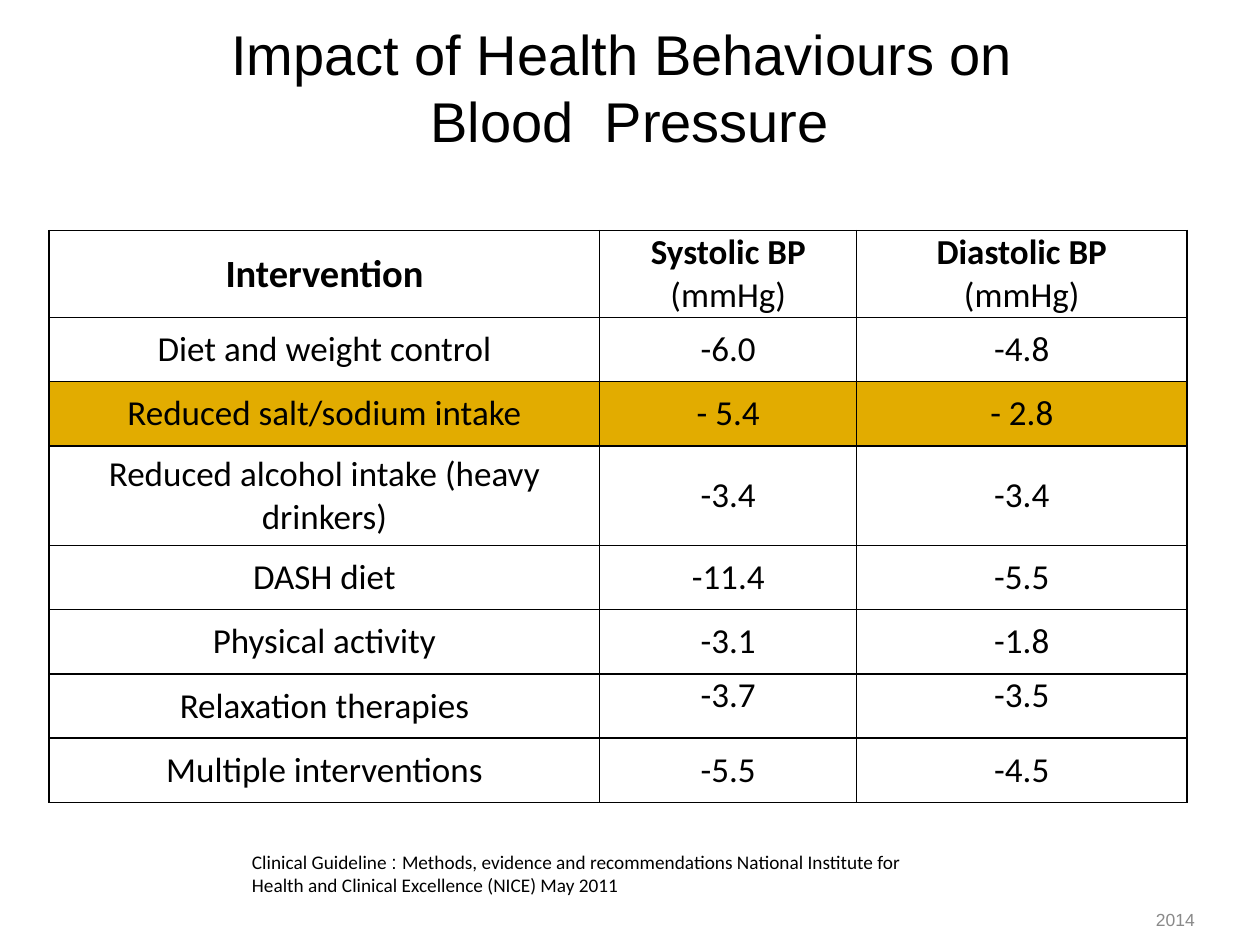
import pptx
import pptx.dml.color
import pptx.enum.text
import pptx.oxml
import pptx.oxml.ns
import pptx.util
from pptx.util import Inches

ALIGN = pptx.enum.text.PP_ALIGN
ANCHOR = pptx.enum.text.MSO_ANCHOR
BLACK, WHITE, GOLD, GREY = "000000", "FFFFFF", "E2AC00", "898989"

COLUMN_WIDTHS = [4.37, 2.04, 2.62]
HEADERS = [
    [("Intervention", 22, True)],
    [("Systolic BP", 20, True), ("(mmHg)", 20, False)],
    [("Diastolic BP", 20, True), ("(mmHg)", 20, False)],
]
HEADER_HEIGHT, ROW_HEIGHT, TALL_ROW_HEIGHT = 0.69, 0.51, 0.79
INTERVENTIONS = [
    ("Diet and weight control", "-6.0", "-4.8"),
    ("Reduced salt/sodium intake", "- 5.4", "- 2.8"),
    ("Reduced alcohol intake (heavy drinkers)", "-3.4", "-3.4"),
    ("DASH diet", "-11.4", "-5.5"),
    ("Physical activity", "-3.1", "-1.8"),
    ("Relaxation therapies", "-3.7", "-3.5"),
    ("Multiple interventions", "-5.5", "-4.5"),
]
HIGHLIGHTED_ROW, TALL_ROW, TOP_VALUES_ROW = 2, 3, 6


def rgb(color):
    return pptx.dml.color.RGBColor.from_string(color)


def add_run(p, text, size, font="Calibri", color=BLACK, bold=False):
    r = p.add_run()
    r.text = text
    r.font.size = pptx.util.Pt(size)
    r.font.name = font
    r.font.bold = bold
    r.font.color.rgb = rgb(color)


def add_text_box(s, box, inset, anchor, align):
    sp = s.shapes.add_textbox(*map(Inches, box))
    tf = sp.text_frame
    tf.word_wrap = True
    tf.vertical_anchor = anchor
    tf.margin_left = tf.margin_right = Inches(inset)
    tf.margin_top = tf.margin_bottom = Inches(inset)
    p = tf.paragraphs[0]
    p.alignment = align
    return p


def add_title(s, box):
    p = add_text_box(s, box, 0.04, ANCHOR.MIDDLE, ALIGN.CENTER)
    add_run(p, "Impact of Health Behaviours on ", 32, "Arial")
    p.add_line_break()
    add_run(p, "Blood  Pressure", 32, "Arial")


def add_borders(cell):
    tc_pr = cell._tc.get_or_add_tcPr()
    for index, side in enumerate(("lnL", "lnR", "lnT", "lnB")):
        tc_pr.insert(index, pptx.oxml.parse_xml(
            f'<a:{side} {pptx.oxml.ns.nsdecls("a")} w="12700"><a:solidFill>'
            f'<a:srgbClr val="{BLACK}"/></a:solidFill></a:{side}>'))


def fill_cell(cell, lines, fill, anchor):
    cell.margin_left = cell.margin_right = 0
    cell.margin_top = cell.margin_bottom = 0
    cell.vertical_anchor = anchor
    cell.fill.solid()
    cell.fill.fore_color.rgb = rgb(fill)
    add_borders(cell)
    tf = cell.text_frame
    for index, (text, size, bold) in enumerate(lines):
        p = tf.add_paragraph() if index else tf.paragraphs[0]
        p.alignment = ALIGN.CENTER
        add_run(p, text, size, bold=bold)


def add_intervention_table(s, box):
    rows = [HEADERS] + [[[(text, 20, False)] for text in row] for row in INTERVENTIONS]
    table = s.shapes.add_table(len(rows), len(COLUMN_WIDTHS), *map(Inches, box)).table
    for column, width in zip(table.columns, COLUMN_WIDTHS):
        column.width = Inches(width)
    heights = {0: HEADER_HEIGHT, TALL_ROW: TALL_ROW_HEIGHT}
    for i, row in enumerate(rows):
        table.rows[i].height = Inches(heights.get(i, ROW_HEIGHT))
        fill = GOLD if i == HIGHLIGHTED_ROW else WHITE
        for j, lines in enumerate(row):
            at_top = i == TOP_VALUES_ROW and j > 0
            fill_cell(table.cell(i, j), lines, fill, ANCHOR.TOP if at_top else ANCHOR.MIDDLE)


def add_source(s, box):
    p = add_text_box(s, box, 0, ANCHOR.TOP, ALIGN.LEFT)
    add_run(p, "Clinical Guideline ", 11)
    add_run(p, ": ", 11, "Arial")
    add_run(p, "Methods, evidence and recommendations National Institute for "
               "Health and Clinical Excellence (NICE) May 2011", 11)


def add_year(s, box):
    p = add_text_box(s, box, 0.1, ANCHOR.MIDDLE, ALIGN.RIGHT)
    add_run(p, "2014", 10, "Arial", GREY)


def main():
    prs = pptx.Presentation()
    prs.slide_width, prs.slide_height = Inches(10), Inches(7.5)
    s = prs.slides.add_slide(prs.slide_layouts[6])
    add_title(s, (0.5, 0.21, 9, 0.95))
    add_intervention_table(s, (0.39, 1.83, 9.03, 4.52))
    add_source(s, (2, 6.75, 5.23, 0.44))
    add_year(s, (8.7, 7.1, 0.88, 0.4))
    prs.save("out.pptx")


if __name__ == "__main__":
    main()
